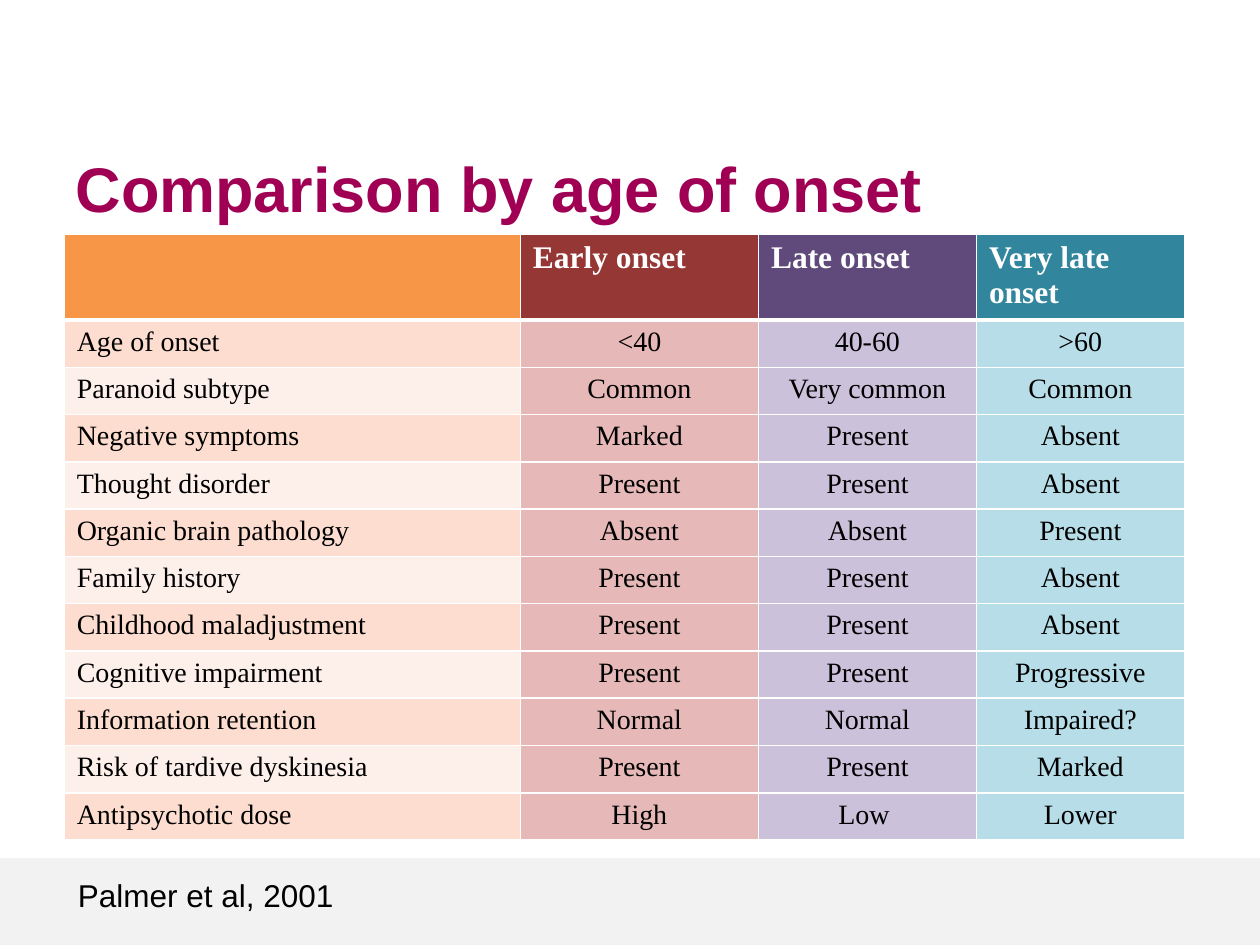
from dataclasses import dataclass

from lxml.etree import SubElement
from pptx import Presentation
from pptx.dml.color import RGBColor
from pptx.enum.shapes import MSO_SHAPE
from pptx.enum.text import MSO_ANCHOR, PP_ALIGN
from pptx.oxml.ns import qn
from pptx.util import Inches, Pt

WHITE = RGBColor(0xFF, 0xFF, 0xFF)
BLACK = RGBColor(0x00, 0x00, 0x00)
MAGENTA = RGBColor(0xA0, 0x00, 0x54)
FOOTER_GREY = RGBColor(0xF2, 0xF2, 0xF2)
ORANGE = RGBColor(0xF7, 0x96, 0x46)
PEACH = RGBColor(0xFC, 0xDD, 0xCF)
PALE_PEACH = RGBColor(0xFD, 0xEF, 0xE9)
RED = RGBColor(0x95, 0x37, 0x35)
PINK = RGBColor(0xE6, 0xB9, 0xB8)
PURPLE = RGBColor(0x60, 0x4A, 0x7B)
LILAC = RGBColor(0xCC, 0xC1, 0xDA)
TEAL = RGBColor(0x31, 0x85, 0x9C)
PALE_TEAL = RGBColor(0xB7, 0xDE, 0xE8)


@dataclass
class Column:
    heading: str
    width: float
    heading_fill: RGBColor
    odd_fill: RGBColor
    even_fill: RGBColor
    alignment: PP_ALIGN


@dataclass
class TextStyle:
    font: str
    size: int
    color: RGBColor
    bold: bool = False


TITLE_STYLE = TextStyle("Arial", 36, MAGENTA, True)
CITATION_STYLE = TextStyle("Arial", 18, BLACK)
HEADING_STYLE = TextStyle("Times New Roman", 18, WHITE, True)
BODY_STYLE = TextStyle("Times New Roman", 16, BLACK)

COLUMNS = [
    Column("", 3.62, ORANGE, PEACH, PALE_PEACH, PP_ALIGN.LEFT),
    Column("Early onset", 1.89, RED, PINK, PINK, PP_ALIGN.CENTER),
    Column("Late onset", 1.73, PURPLE, LILAC, LILAC, PP_ALIGN.CENTER),
    Column("Very late onset", 1.65, TEAL, PALE_TEAL, PALE_TEAL, PP_ALIGN.CENTER),
]
FEATURES = [
    ("Age of onset", "<40", "40-60", ">60"),
    ("Paranoid subtype", "Common", "Very common", "Common"),
    ("Negative symptoms", "Marked", "Present", "Absent"),
    ("Thought disorder", "Present", "Present", "Absent"),
    ("Organic brain pathology", "Absent", "Absent", "Present"),
    ("Family history", "Present", "Present", "Absent"),
    ("Childhood maladjustment", "Present", "Present", "Absent"),
    ("Cognitive impairment", "Present", "Present", "Progressive"),
    ("Information retention", "Normal", "Normal", "Impaired?"),
    ("Risk of tardive dyskinesia", "Present", "Present", "Marked"),
    ("Antipsychotic dose", "High", "Low ", "Lower"),
]
HEADING_HEIGHT = 0.68
ROW_HEIGHT = 4.13 / len(FEATURES)


def write_text(frame, text: str, style: TextStyle, alignment=PP_ALIGN.LEFT) -> None:
    para = frame.paragraphs[0]
    para.alignment = alignment
    if not text:
        para.font.size = Pt(style.size)
        return
    span = para.add_run()
    span.text = text
    span.font.name = style.font
    span.font.size = Pt(style.size)
    span.font.bold = style.bold
    span.font.color.rgb = style.color


def add_borders(cell, top: int, bottom: int) -> None:
    properties = cell._tc.get_or_add_tcPr()
    for side, points in (("L", 1), ("R", 1), ("T", top), ("B", bottom)):
        line = SubElement(properties, qn(f"a:ln{side}"), w=str(Pt(points)))
        fill = SubElement(line, qn("a:solidFill"))
        SubElement(fill, qn("a:srgbClr"), val=str(WHITE))


def add_footer_band(page) -> None:
    band = page.shapes.add_shape(
        MSO_SHAPE.RECTANGLE, Inches(0), Inches(6.81), Inches(10), Inches(0.69)
    )
    band.shadow.inherit = False
    band.fill.solid()
    band.fill.fore_color.rgb = FOOTER_GREY
    band.line.fill.background()


def add_title(page) -> None:
    title = page.shapes.title
    title.left, title.top = Inches(0.5), Inches(1.12)
    title.width, title.height = Inches(8.57), Inches(0.74)
    title.text_frame.vertical_anchor = MSO_ANCHOR.MIDDLE
    write_text(title.text_frame, "Comparison by age of onset", TITLE_STYLE)


def add_comparison_table(page) -> None:
    table = page.shapes.add_table(
        len(FEATURES) + 1, len(COLUMNS),
        Inches(0.51), Inches(1.86), Inches(8.89), Inches(4.81),
    ).table
    for row_index, row in enumerate(table.rows):
        row.height = Inches(ROW_HEIGHT if row_index else HEADING_HEIGHT)
    for column_index, column in enumerate(COLUMNS):
        table.columns[column_index].width = Inches(column.width)
        heading = table.cell(0, column_index)
        add_borders(heading, 1, 3)
        heading.fill.solid()
        heading.fill.fore_color.rgb = column.heading_fill
        write_text(heading.text_frame, column.heading, HEADING_STYLE)
        for row_index, feature in enumerate(FEATURES, start=1):
            cell = table.cell(row_index, column_index)
            add_borders(cell, 3 if row_index == 1 else 1, 1)
            cell.fill.solid()
            cell.fill.fore_color.rgb = column.odd_fill if row_index % 2 else column.even_fill
            write_text(cell.text_frame, feature[column_index], BODY_STYLE, column.alignment)


def add_citation(page) -> None:
    box = page.shapes.add_textbox(Inches(0.52), Inches(6.9), Inches(3.07), Inches(0.4))
    box.text_frame.word_wrap = True
    write_text(box.text_frame, "Palmer et al, 2001", CITATION_STYLE)


def main() -> None:
    deck = Presentation()
    deck.slide_width, deck.slide_height = Inches(10), Inches(7.5)
    page = deck.slides.add_slide(deck.slide_layouts[5])
    add_footer_band(page)
    add_title(page)
    add_comparison_table(page)
    add_citation(page)
    deck.save("out.pptx")


if __name__ == "__main__":
    main()
